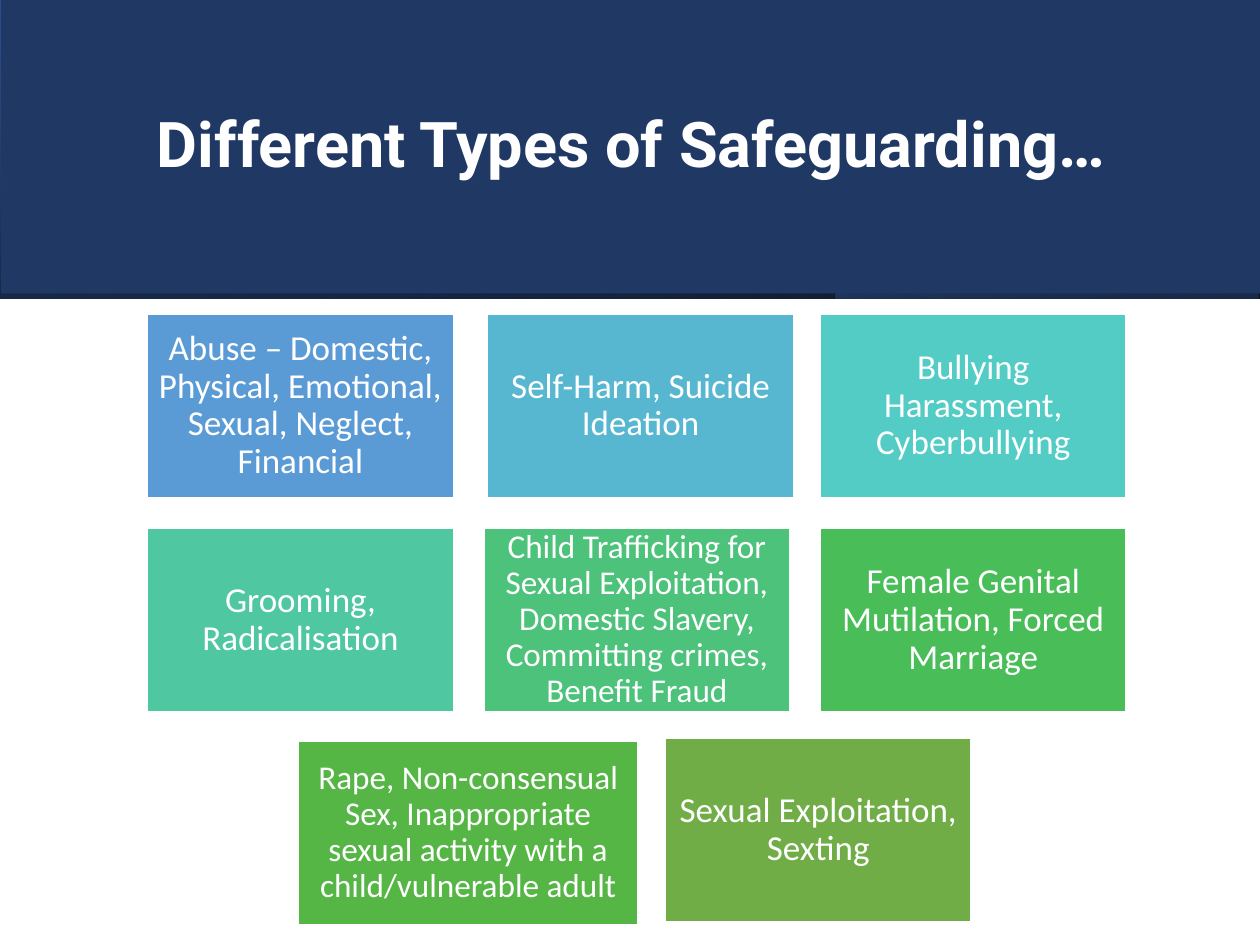
from pptx import Presentation
from pptx.dml.color import RGBColor
from pptx.enum.shapes import MSO_SHAPE as Shape
from pptx.enum.text import MSO_ANCHOR as Anchor, PP_ALIGN as Align
from pptx.oxml.ns import qn
from pptx.util import Inches, Pt
from lxml.etree import SubElement

COLORS = {
    "white": "FFFFFF", "black": "000000", "navy": "203864",
    "royal": "2F5597", "azure": "4472C4",
    "abuse": "5B9BD5", "harm": "57B7D1", "bullying": "53CCC5",
    "grooming": "4FC7A0", "trafficking": "4CC27B", "mutilation": "48BD58",
    "rape": "55B646", "exploitation": "70AD47",
}
TITLE = {"name": "Roboto", "size": Pt(36), "bold": True}
TILE_WIDTH, TILE_HEIGHT = 2.43, 1.46
TILES = [
    (1.17, 2.49, TILE_WIDTH, "abuse", 20,
     "Abuse – Domestic, Physical, Emotional, Sexual, Neglect, Financial"),
    (3.87, 2.49, TILE_WIDTH, "harm", 20, "Self-Harm, Suicide Ideation"),
    (6.51, 2.49, TILE_WIDTH, "bullying", 20, "Bullying Harassment, Cyberbullying"),
    (1.17, 4.19, TILE_WIDTH, "grooming", 20, "Grooming, Radicalisation"),
    (3.84, 4.19, TILE_WIDTH, "trafficking", 19,
     "Child Trafficking for Sexual Exploitation, Domestic Slavery, "
     "Committing crimes, Benefit Fraud"),
    (6.51, 4.19, TILE_WIDTH, "mutilation", 20,
     "Female Genital Mutilation, Forced Marriage"),
    (2.37, 5.88, 2.69, "rape", 19,
     "Rape, Non-consensual Sex, Inappropriate sexual activity with a "
     "child/vulnerable adult"),
    (5.28, 5.86, TILE_WIDTH, "exploitation", 20, "Sexual Exploitation, Sexting"),
]


def color(name):
    return RGBColor.from_string(COLORS[name])


def add_rect(page, box):
    rect = page.shapes.add_shape(Shape.RECTANGLE, *map(Inches, box))
    rect.shadow.inherit = False
    rect.line.fill.background()
    return rect


def add_gradient(page, box, angle, stops, rotation=0):
    rect = add_rect(page, box)
    rect.rotation = rotation
    rect._element.spPr.find(qn("a:xfrm")).set("flipH", "1")
    rect.fill.gradient()
    rect.fill.gradient_angle = 360 - angle
    for stop, (position, name, opacity) in zip(rect.fill.gradient_stops, stops):
        stop.position = position / 100
        stop.color.rgb = color(name)
        tint = stop._gs.find(qn("a:srgbClr"))
        SubElement(tint, qn("a:alpha")).set("val", str(opacity * 1000))


def add_label(page, box, fill, text, font, inset):
    rect = add_rect(page, box)
    rect.fill.solid()
    rect.fill.fore_color.rgb = color(fill)
    frame = rect.text_frame
    layout = {"word_wrap": True, "vertical_anchor": Anchor.MIDDLE}
    layout.update({f"margin_{side}": Inches(inset)
                   for side in ("left", "top", "right", "bottom")})
    for key, value in layout.items():
        setattr(frame, key, value)
    para = frame.paragraphs[0]
    para.alignment = Align.CENTER
    para.line_spacing = 0.9
    span = para.add_run()
    span.text = text
    for key, value in font.items():
        setattr(span.font, key, value)
    span.font.color.rgb = color("white")
    return rect


def add_banner(page, box):
    left, top, width, height = box
    add_gradient(page, box, 330, [(0, "black", 96), (100, "royal", 100)])
    add_gradient(page, (left + 6.63, top, 3.36, height), 320,
                 [(19, "navy", 68), (100, "azure", 48)])
    shift = (width - height) / 2
    add_gradient(page, (left + shift, top - shift, height, width), 350,
                 [(23, "royal", 16), (99, "black", 45)], rotation=270)
    add_label(page, (left + 0.01, top, width, height - 0.04), "navy",
              "Different Types of Safeguarding…", TITLE, 0.1)


def add_tile(page, box, fill, size, text):
    tile = add_label(page, box, fill, text,
                     {"name": "Calibri", "size": Pt(size)}, 0.08)
    tile.line.color.rgb = color("white")
    tile.line.width = Pt(1)


def main():
    deck = Presentation()
    deck.slide_width, deck.slide_height = Inches(10), Inches(7.5)
    page = deck.slides.add_slide(deck.slide_layouts[6])
    add_banner(page, (0, 0, 10, 2.37))
    for left, top, width, fill, size, text in TILES:
        add_tile(page, (left, top, width, TILE_HEIGHT), fill, size, text)
    deck.save("out.pptx")


if __name__ == "__main__":
    main()
